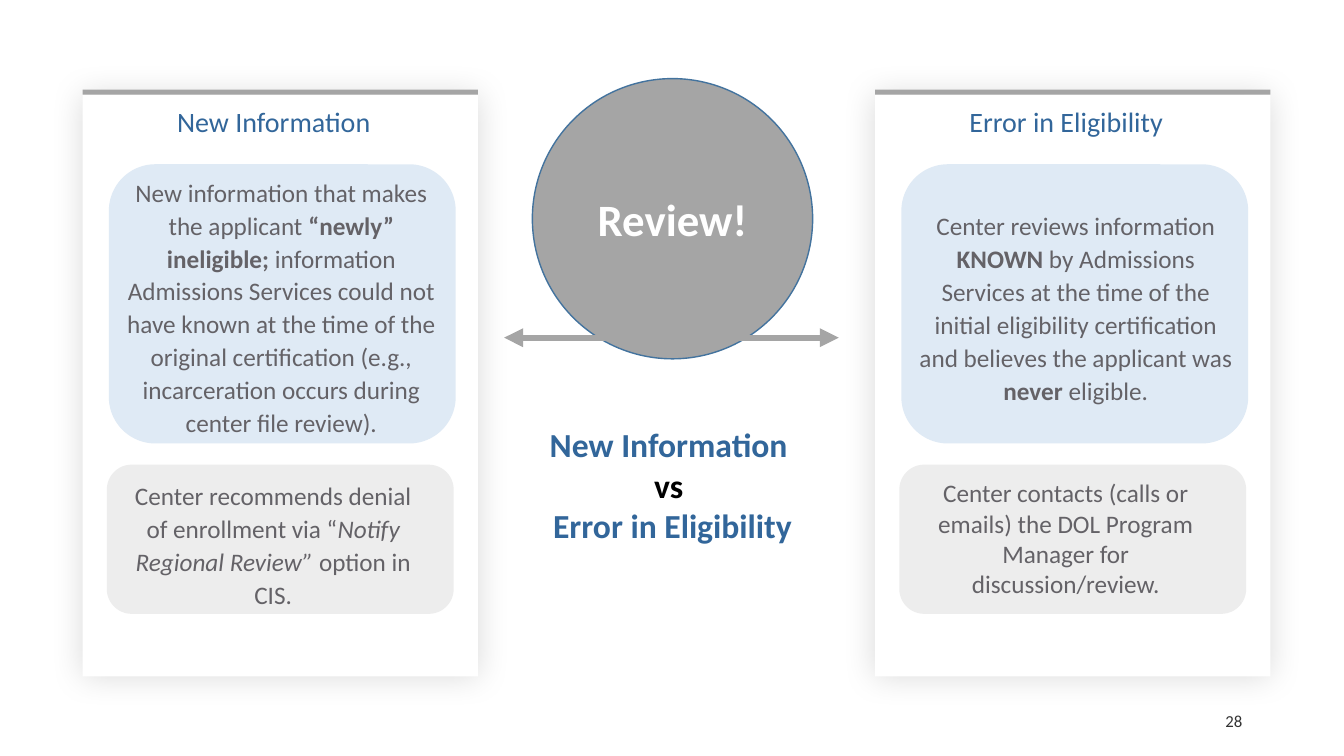
"""Build the slide that compares new information with an error in eligibility."""
from dataclasses import dataclass

from lxml import etree
from pptx import Presentation
from pptx.dml.color import RGBColor
from pptx.enum import shapes, text
from pptx.oxml import ns
from pptx.util import Inches, Pt


@dataclass(frozen=True)
class Theme:
    font: str = "Calibri"
    white: str = "FFFFFF"
    black: str = "000000"
    blue: str = "32669A"
    outline: str = "43739E"
    grey: str = "A5A5A5"
    pale_blue: str = "DFEAF5"
    pale_grey: str = "EDEDED"
    body: str = "646267"
    page: str = "333333"
    review_size: int = 32
    title_size: int = 24
    heading_size: int = 20
    body_size: int = 18
    page_size: int = 12


@dataclass(frozen=True)
class Box:
    left: float
    top: float
    width: float
    height: float

    def lengths(self):
        return [Inches(v) for v in (self.left, self.top, self.width, self.height)]


@dataclass(frozen=True)
class Piece:
    words: str
    bold: bool = False
    italic: bool = False


@dataclass(frozen=True)
class Panel:
    left: float
    heading: str
    definition: tuple[Piece, ...]
    definition_box: Box
    action: tuple[Piece, ...]
    action_spacing: float
    action_before: int


THEME = Theme()
PANELS = (
    Panel(
        0.82, "New Information",
        (Piece("New information that makes the applicant "),
         Piece("“newly” ineligible; ", bold=True),
         Piece("information Admissions Services could not have known at the time of the "
               "original certification (e.g., incarceration occurs during center file review).")),
        Box(1.08, 1.68, 3.42, 2.73),
        (Piece("Center recommends denial of enrollment via “"),
         Piece("Notify Regional Review” ", italic=True),
         Piece("option in CIS.")),
        1.09, 6),
    Panel(
        8.68, "Error in Eligibility",
        (Piece("Center reviews information "),
         Piece("KNOWN", bold=True),
         Piece(" by Admissions Services at the time of the initial eligibility "
               "certification and believes the applicant was "),
         Piece("never", bold=True),
         Piece(" eligible.")),
        Box(8.96, 2.01, 3.42, 2.07),
        (Piece("Center contacts (calls or emails) the DOL Program Manager "
               "for discussion/review."),),
        1.0, 0),
)


def write(paragraph, pieces: tuple[Piece, ...], size: int, color: str,
          spacing: float = 1.0, before: int = 0, align=text.PP_ALIGN.CENTER) -> None:
    paragraph.alignment = align
    paragraph.line_spacing = spacing
    paragraph.space_before = Pt(before)
    for piece in pieces:
        run = paragraph.add_run()
        run.text = piece.words
        run.font.name = THEME.font
        run.font.size = Pt(size)
        run.font.bold = piece.bold
        run.font.italic = piece.italic
        run.font.color.rgb = RGBColor.from_string(color)


def add_text(slide, box: Box, *args, anchor=text.MSO_ANCHOR.TOP, **options) -> None:
    frame = slide.shapes.add_textbox(*box.lengths()).text_frame
    frame.word_wrap = True
    frame.vertical_anchor = anchor
    write(frame.paragraphs[0], *args, **options)


def add_block(slide, kind, box: Box, fill: str):
    block = slide.shapes.add_shape(kind, *box.lengths())
    block.shadow.inherit = False
    block.fill.solid()
    block.fill.fore_color.rgb = RGBColor.from_string(fill)
    block.line.fill.background()
    return block


def add_glow(card) -> None:
    effects = card._element.spPr.find(ns.qn("a:effectLst"))
    shadow = etree.SubElement(effects, ns.qn("a:outerShdw"), blurRad=str(Pt(23.8)),
                              dist="0", dir="0", algn="ctr", rotWithShape="0")
    color = etree.SubElement(shadow, ns.qn("a:srgbClr"), val=THEME.black)
    etree.SubElement(color, ns.qn("a:alpha"), val="15000")


def add_panel(slide, panel: Panel) -> None:
    rectangle = shapes.MSO_SHAPE.RECTANGLE
    rounded = shapes.MSO_SHAPE.ROUNDED_RECTANGLE
    left = panel.left
    add_glow(add_block(slide, rectangle, Box(left, 0.94, 3.92, 5.77), THEME.white))
    add_block(slide, rectangle, Box(left, 0.89, 3.92, 0.05), THEME.grey)
    add_block(slide, rounded, Box(left + 0.26, 1.63, 3.44, 2.77), THEME.pale_blue)
    add_text(slide, panel.definition_box, panel.definition,
             THEME.body_size, THEME.body, spacing=1.09, before=6)
    add_block(slide, rounded, Box(left + 0.24, 4.61, 3.44, 1.48), THEME.pale_grey)
    add_text(slide, Box(left + 0.34, 4.69, 3.1, 1.41), panel.action, THEME.body_size,
             THEME.body, spacing=panel.action_spacing, before=panel.action_before)
    add_text(slide, Box(left + 0.68, 0.99, 2.43, 0.44), (Piece(panel.heading),),
             THEME.heading_size, THEME.blue)


def add_arrow(slide, start: float, end: float) -> None:
    y = Inches(3.35)
    arrow = slide.shapes.add_connector(shapes.MSO_CONNECTOR.STRAIGHT,
                                       Inches(start), y, Inches(end), y)
    arrow.line.color.rgb = RGBColor.from_string(THEME.grey)
    arrow.line.width = Pt(4.5)
    etree.SubElement(arrow.line._get_or_add_ln(), ns.qn("a:tailEnd"), type="triangle")
    etree.SubElement(arrow._element.spPr, ns.qn("a:effectLst"))


def add_review(slide) -> None:
    review = add_block(slide, shapes.MSO_SHAPE.OVAL, Box(5.28, 0.78, 2.78, 2.78), THEME.grey)
    review.line.color.rgb = RGBColor.from_string(THEME.outline)
    review.line.width = Pt(1)
    review.text_frame.vertical_anchor = text.MSO_ANCHOR.MIDDLE
    write(review.text_frame.paragraphs[0], (Piece("Review!", bold=True),),
          THEME.review_size, THEME.white)
    for start, end in ((6.92, 8.32), (6.29, 5)):
        add_arrow(slide, start, end)


def fill_title(slide) -> None:
    title = slide.shapes.title
    title.left, title.top, title.width, title.height = Box(5.28, 4.16, 2.78, 2.12).lengths()
    frame = title.text_frame
    frame.word_wrap = True
    frame.auto_size = text.MSO_AUTO_SIZE.NONE
    frame.vertical_anchor = text.MSO_ANCHOR.TOP
    lines = (("New Information ", THEME.blue), ("vs ", THEME.black),
             ("Error in Eligibility", THEME.blue))
    for index, (words, color) in enumerate(lines):
        paragraph = frame.add_paragraph() if index else frame.paragraphs[0]
        write(paragraph, (Piece(words, bold=True),), THEME.title_size, color)


def main() -> None:
    deck = Presentation()
    deck.slide_width, deck.slide_height = Inches(13.33), Inches(7.5)
    slide = deck.slides.add_slide(deck.slide_layouts[5])
    fill_title(slide)
    for panel in PANELS:
        add_panel(slide, panel)
    add_review(slide)
    add_text(slide, Box(9.42, 6.95, 3, 0.4), (Piece("28"),), THEME.page_size, THEME.page,
             align=text.PP_ALIGN.RIGHT, anchor=text.MSO_ANCHOR.MIDDLE)
    deck.save("out.pptx")


if __name__ == "__main__":
    main()
